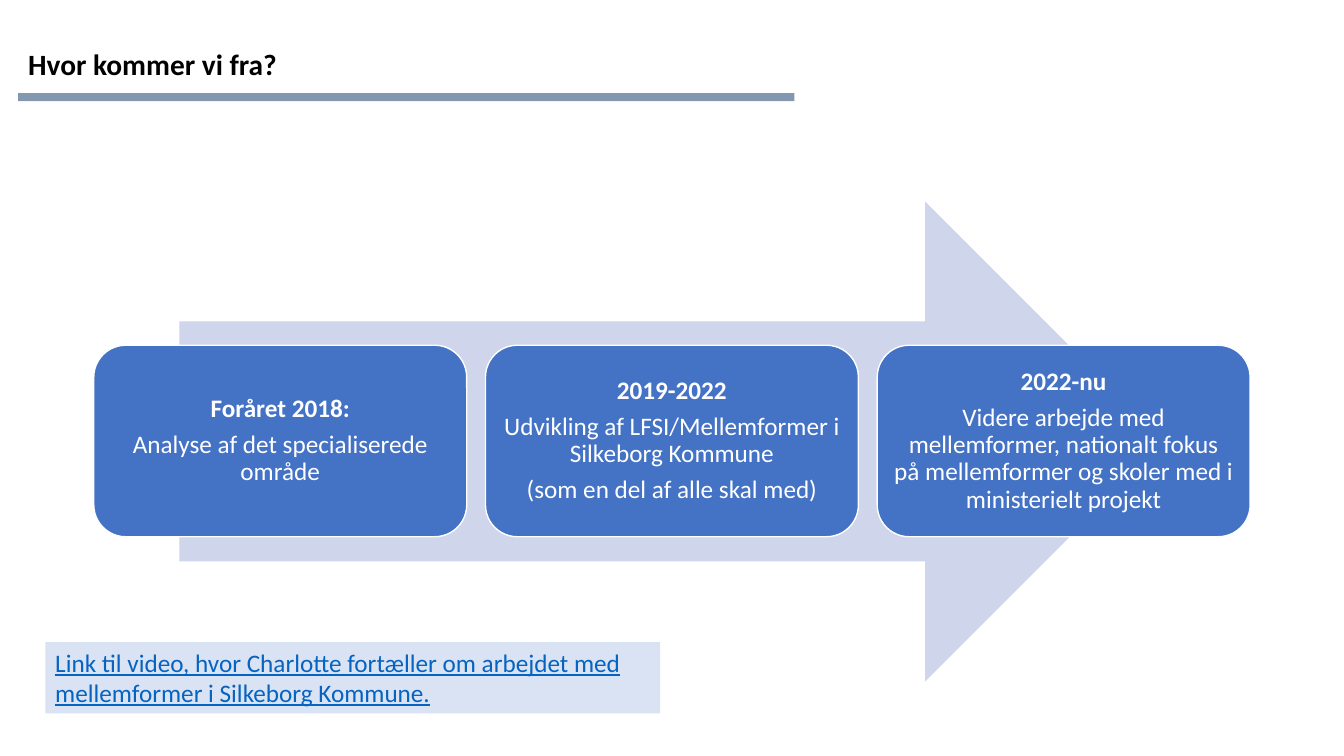
"""Build a slide with a three-step timeline on an arrow."""
from dataclasses import dataclass

from pptx import Presentation
from pptx.dml.color import RGBColor as Rgb
from pptx.enum.shapes import MSO_SHAPE as Kind
from pptx.enum.text import MSO_ANCHOR as Anchor, PP_ALIGN as Align
from pptx.util import Pt

HUES = {
    "arrow": "CFD5EA", "card": "4472C4", "white": "FFFFFF", "black": "000000",
    "rule": "8497B0", "pale": "DAE3F3", "link": "0563C1",
}


@dataclass
class Box:
    left: float
    top: float
    width: float
    height: float

    def place(self) -> tuple:
        return Pt(self.left), Pt(self.top), Pt(self.width), Pt(self.height)


@dataclass
class Step:
    head: str
    lines: list[str]


STEPS = [
    Step("Foråret 2018:", ["Analyse af det specialiserede område"]),
    Step("2019-2022", ["Udvikling af LFSI/Mellemformer i Silkeborg Kommune",
                       "(som en del af alle skal med)"]),
    Step("2022-nu", ["Videre arbejde med mellemformer, nationalt fokus "
                     "på mellemformer og skoler med i ministerielt projekt"]),
]


def hue(name: str) -> Rgb:
    return Rgb.from_string(HUES[name])


def draw(slide, kind: Kind, box: Box, fill: str, line: str | None = None):
    shape = slide.shapes.add_shape(kind, *box.place())
    shape.shadow.inherit = False
    shape.fill.solid()
    shape.fill.fore_color.rgb = hue(fill)
    if line:
        shape.line.color.rgb = hue(line)
        shape.line.width = Pt(1)
    else:
        shape.line.fill.background()
    return shape


def frame(shape, anchor: Anchor, inset: float | None = None):
    body = shape.text_frame
    body.word_wrap = True
    body.vertical_anchor = anchor
    if inset is not None:
        body.margin_left = body.margin_right = Pt(inset)
        body.margin_top = body.margin_bottom = Pt(inset)
    return body


def write(body, text: str, *, first: bool = True, color: str = "white",
          size: float = 18, bold: bool = False, under: bool = False,
          align: Align = Align.LEFT, lead: float = 1, after: float = 0) -> None:
    para = body.paragraphs[0] if first else body.add_paragraph()
    para.alignment = align
    para.line_spacing = lead
    para.space_after = Pt(after)
    run = para.add_run()
    run.text = text
    font = run.font
    font.name = "Calibri"
    font.size = Pt(size)
    font.bold = bold
    font.underline = under
    font.color.rgb = hue(color)


def card(slide, box: Box, step: Step) -> None:
    shape = draw(slide, Kind.ROUNDED_RECTANGLE, box, "card", "white")
    body = frame(shape, Anchor.MIDDLE, 5)
    for rank, text in enumerate([step.head, *step.lines]):
        write(body, text, first=rank == 0, bold=rank == 0,
              align=Align.CENTER, lead=0.9, after=6.3)


def main() -> None:
    deck = Presentation()
    deck.slide_width, deck.slide_height = Pt(960), Pt(540)
    slide = deck.slides.add_slide(deck.slide_layouts[6])

    draw(slide, Kind.RIGHT_ARROW, Box(128.2, 144, 704, 342.7), "arrow")
    for rank, step in enumerate(STEPS):
        card(slide, Box(67 + 279.8 * rank, 246.6, 266.4, 136.8), step)

    title = slide.shapes.add_textbox(*Box(13, -5, 828, 104.4).place())
    write(frame(title, Anchor.MIDDLE), "Hvor kommer vi fra?",
          color="black", size=21, bold=True, lead=0.9)
    draw(slide, Kind.RECTANGLE, Box(13, 66.5, 554.4, 5.8), "rule")

    link = draw(slide, Kind.RECTANGLE, Box(32.4, 458.6, 439.2, 51), "pale")
    write(frame(link, Anchor.TOP),
          "Link til video, hvor Charlotte fortæller om arbejdet med "
          "mellemformer i Silkeborg Kommune.", color="link", under=True)
    deck.save("out.pptx")


if __name__ == "__main__":
    main()
